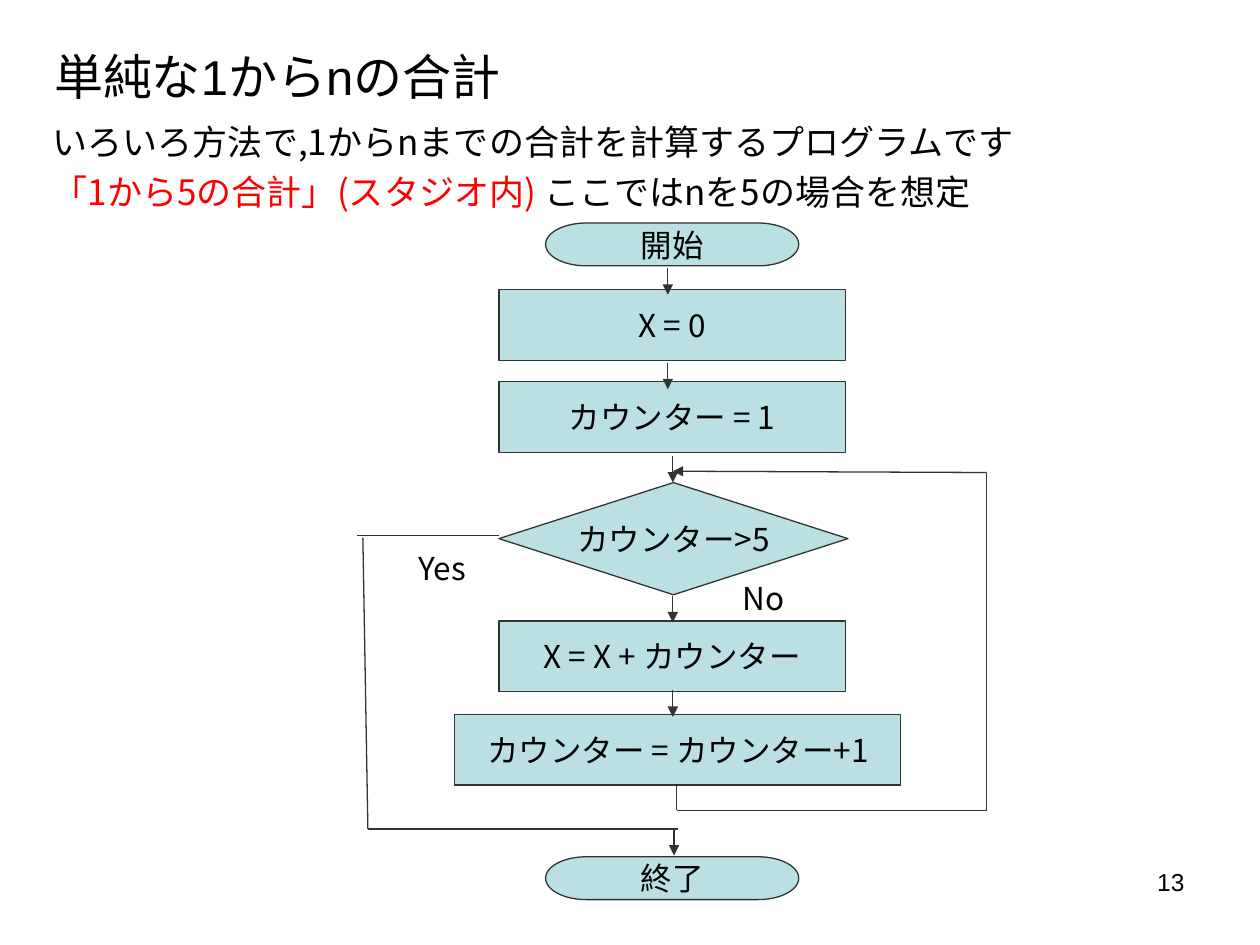
from pptx import Presentation, util as u
from pptx.dml.color import RGBColor
from pptx.enum import shapes, text
from pptx.oxml.ns import qn
from lxml import etree

PX = 9144
CJK = "Noto Sans CJK JP"
HUE = {"ink": "000000", "red": "FF0000", "fill": "BBE0E3", "line": "333333"}
KIND = shapes.MSO_SHAPE
ALIGN = text.PP_ALIGN
ANCHOR = text.MSO_ANCHOR


def tint(name):
    """Return a named colour."""
    return RGBColor.from_string(HUE[name])


def emu(*nums):
    """Turn px into EMU."""
    return [u.Emu(n * PX) for n in nums]


def write(shape, lines, size=18, font=CJK, align=ALIGN.LEFT,
          anchor=ANCHOR.TOP, wrap=True, lead=1.0):
    """Write lines of (words, colour) runs, parted by line breaks."""
    frame = shape.text_frame
    frame.word_wrap = wrap
    frame.auto_size = text.MSO_AUTO_SIZE.NONE
    frame.vertical_anchor = anchor
    para = frame.paragraphs[0]
    para.alignment = align
    para.line_spacing = lead
    for i, line in enumerate(lines):
        if i:
            para.add_line_break()
        for words, hue in line:
            run = para.add_run()
            run.text = words
            run.font.size = u.Pt(size)
            run.font.name = font
            run.font.color.rgb = tint(hue)
            face = etree.SubElement(run.font._element, qn("a:ea"))
            face.set("typeface", CJK)


def label(slide, box, lines, **form):
    """Add a text box."""
    write(slide.shapes.add_textbox(*emu(*box)), lines, **form)


def node(slide, kind, box, words):
    """Add one step of the flowchart."""
    shape = slide.shapes.add_shape(kind, *emu(*box))
    shape.shadow.inherit = False
    shape.fill.solid()
    shape.fill.fore_color.rgb = tint("fill")
    shape.line.color.rgb = tint("line")
    shape.line.width = u.Pt(0.75)
    write(shape, [[(words, "ink")]], align=ALIGN.CENTER,
          anchor=ANCHOR.MIDDLE, wrap=False)


def link(slide, ends, arrow=False):
    """Add a straight line, with an arrowhead if asked."""
    line = slide.shapes.add_connector(shapes.MSO_CONNECTOR.STRAIGHT, *emu(*ends))
    line.line.color.rgb = tint("line")
    line.line.width = u.Pt(0.75)
    if arrow:
        tip = etree.SubElement(line.line._get_or_add_ln(), qn("a:tailEnd"))
        tip.set("type", "triangle")
    etree.SubElement(line._element.spPr, qn("a:effectLst"))


def head(slide, box):
    """Place the title and the lead text below it."""
    x, y, w, h = box
    title = slide.shapes.title
    title.left, title.top, title.width, title.height = emu(x, y, w, h)
    write(title, [[("単純な1からnの合計", "ink")]], size=28, font="Arial",
          anchor=ANCHOR.BOTTOM)
    label(slide, (x - 1, y + 62, w + 23, 91), [
        [("いろいろ方法で,1からnまでの合計を計算するプログラムです", "ink")],
        [("「1から5の合計」(スタジオ内) ", "red"),
         ("ここではnを5の場合を想定", "ink")],
    ], size=20, lead=1.2)


def flow(slide, left, top):
    """Draw the flowchart from its top left corner."""
    end, step = KIND.FLOWCHART_TERMINATOR, KIND.FLOWCHART_PROCESS
    nodes = [
        (end, 150, 0, 201, 34, "開始"),
        (step, 113, 53, 275, 56, "X = 0"),
        (step, 113, 126, 275, 56, "カウンター = 1"),
        (KIND.FLOWCHART_DECISION, 113, 206, 277, 89, "カウンター>5"),
        (step, 113, 316, 275, 56, "X = X + カウンター"),
        (step, 78, 390, 354, 56, "カウンター = カウンター+1"),
        (end, 150, 503, 201, 34, "終了"),
    ]
    for kind, x, y, w, h, words in nodes:
        node(slide, kind, (left + x, top + y, w, h), words)

    drops = [(247, 36), (247, 111), (251, 185), (251, 296), (251, 371), (252, 481)]
    heads = [(x, y, x, y + 21) for x, y in drops] + [(500, 198, 251, 197)]
    loop = [(254, 446, 254, 466), (500, 466, 254, 466), (500, 198, 500, 466)]
    leave = [(113, 248, 0, 248), (5, 250, 9, 481), (255, 481, 9, 481)]
    for ends in heads + loop + leave:
        a, b, c, d = ends
        link(slide, (left + a, top + b, left + c, top + d), ends in heads)

    for x, y, w, words in [(29, 254, 78, "Yes"), (274, 278, 98, "No")]:
        label(slide, (left + x, top + y, w, 40), [[(words, "ink")]],
              align=ALIGN.CENTER)


def main():
    """Build and save the slide."""
    deck = Presentation()
    deck.slide_width, deck.slide_height = emu(1000, 750)
    slide = deck.slides.add_slide(deck.slide_layouts[5])
    head(slide, (33, 22, 942, 67))
    flow(slide, 283, 177)
    label(slide, (717, 683, 233, 52), [[("13", "ink")]], size=14,
          font="Arial", align=ALIGN.RIGHT)
    deck.save("out.pptx")


if __name__ == "__main__":
    main()
